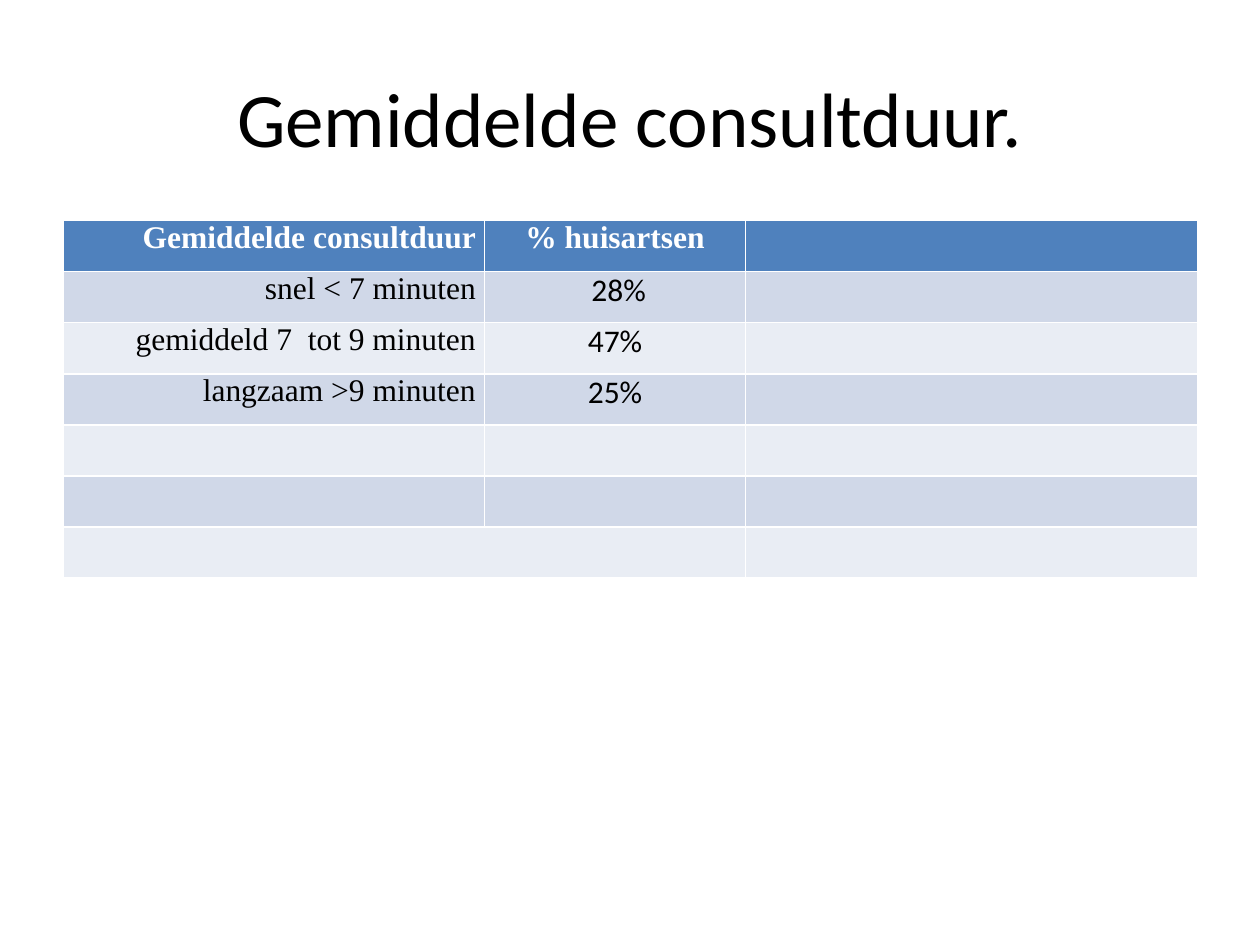
"""Build a slide with a table of average consultation lengths."""
from pptx import Presentation
from pptx.dml.color import RGBColor
from pptx.enum.text import MSO_ANCHOR, PP_ALIGN
from pptx.util import Pt


def rgb(value):
    return RGBColor.from_string(value)


def write(tf, text, font="Calibri", size=18, color="000000", bold=False, align=PP_ALIGN.CENTER):
    p = tf.paragraphs[0]
    p.alignment = align
    r = p.add_run()
    r.text = text
    r.font.name = font
    r.font.size = Pt(size)
    r.font.bold = bold
    r.font.color.rgb = rgb(color)


SERIF = "Times New Roman"
HEADER, BANDS = "4F81BD", ("E9EDF4", "D0D8E8")
ROWS = [
    ("Gemiddelde consultduur", "% huisartsen"),
    ("snel < 7 minuten", " 28%"),
    ("gemiddeld 7  tot 9 minuten", "47%"),
    ("langzaam >9 minuten", "25%"),
]
WIDTHS = (241, 149, 258.5)
ROW_COUNT, ROW_HEIGHT = 7, 29.2

prs = Presentation()
prs.slide_width, prs.slide_height = Pt(720), Pt(540)
s = prs.slides.add_slide(prs.slide_layouts[5])

title = s.shapes.title
title.left, title.top, title.width, title.height = Pt(36), Pt(21.6), Pt(648), Pt(90)
title.text_frame.vertical_anchor = MSO_ANCHOR.MIDDLE
write(title.text_frame, "Gemiddelde consultduur.", size=44)

table = s.shapes.add_table(ROW_COUNT, len(WIDTHS), Pt(36), Pt(126),
                           Pt(sum(WIDTHS)), Pt(ROW_COUNT * ROW_HEIGHT)).table
for column, width in zip(table.columns, WIDTHS):
    column.width = Pt(width)

for i, row in enumerate(table.rows):
    row.height = Pt(ROW_HEIGHT)
    for cell in row.cells:
        cell.fill.solid()
        cell.fill.fore_color.rgb = rgb(BANDS[i % 2] if i else HEADER)

for i, texts in enumerate(ROWS):
    for j, text in enumerate(texts):
        cell = table.cell(i, j)
        cell.margin_left = cell.margin_right = Pt(5)
        cell.margin_top = cell.margin_bottom = Pt(0)
        write(cell.text_frame, text,
              font=SERIF if i == 0 or j == 0 else "Calibri",
              color="000000" if i else "FFFFFF",
              bold=i == 0,
              align=PP_ALIGN.CENTER if j else PP_ALIGN.RIGHT)

table.cell(ROW_COUNT - 1, 0).merge(table.cell(ROW_COUNT - 1, 1))

prs.save("out.pptx")
